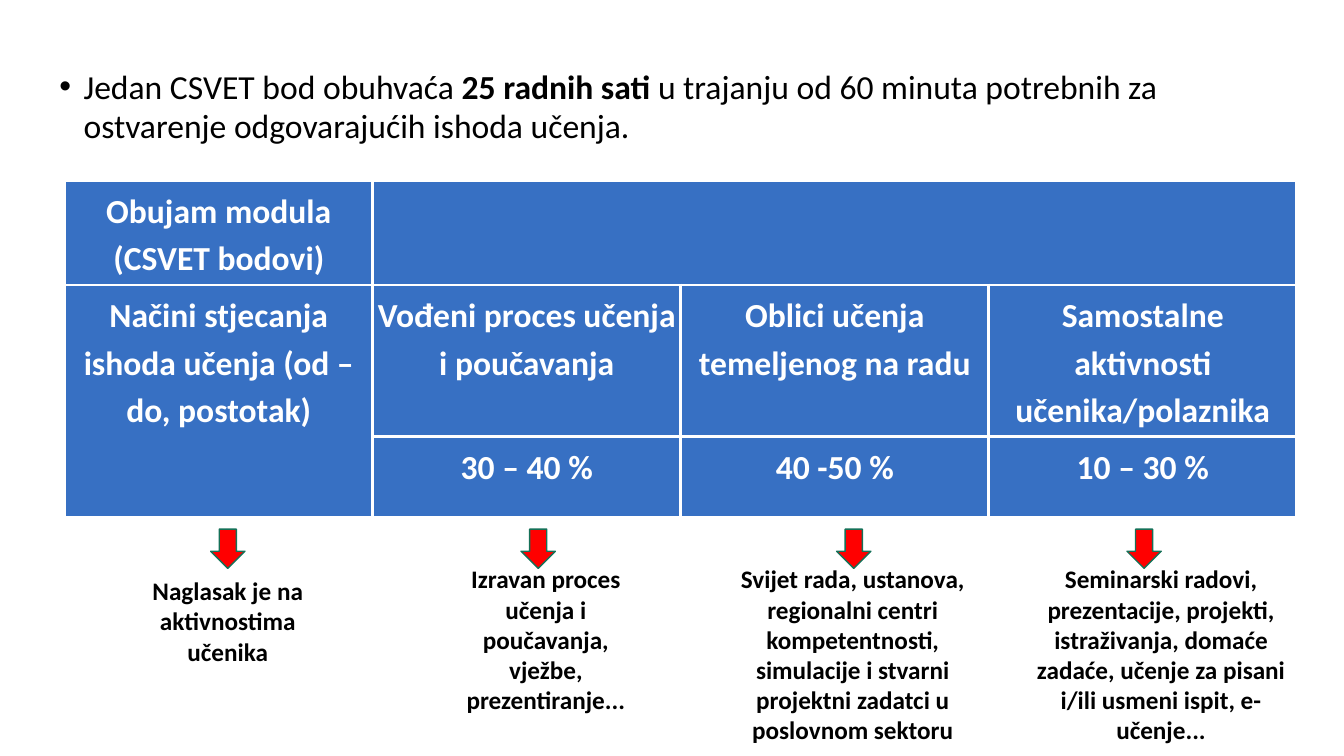
from dataclasses import dataclass

from lxml import etree
from pptx import Presentation
from pptx.dml.color import RGBColor
from pptx.enum import shapes, text
from pptx.oxml import ns
from pptx.util import Pt


@dataclass(frozen=True)
class Theme:
    font: str = "Calibri"
    body: int = 24
    note: int = 18
    ink: str = "000000"
    paper: str = "FFFFFF"
    table: str = "3770C3"
    arrow: str = "FF0000"
    arrow_edge: str = "157158"


THEME = Theme()

# (row, column, text, side inset)
TABLE_CELLS = [
    (0, 0, "Obujam modula (CSVET bodovi)", 2.7),
    (1, 0, "Načini stjecanja ishoda učenja (od –do, postotak)", 2.7),
    (1, 1, "Vođeni proces učenja i poučavanja", 2.7),
    (1, 2, "Oblici učenja temeljenog na radu", 5),
    (1, 3, "Samostalne aktivnosti učenika/polaznika", 5),
    (2, 1, "30 – 40 %", 2.7),
    (2, 2, "40 -50 %", 5),
    (2, 3, "10 – 30 %", 5),
]

# (box, arrow left edge, text)
NOTES = [
    ((91.4, 407.5, 142.6, 72), 150.5, "Naglasak je na aktivnostima učenika"),
    ((312.5, 399, 154.8, 115), 372.2,
     "Izravan proces učenja i poučavanja, vježbe, prezentiranje..."),
    ((503.3, 399, 211.7, 137), 597.6,
     "Svijet rada, ustanova, regionalni centri kompetentnosti, "
     "simulacije i stvarni projektni zadatci u poslovnom sektoru"),
    ((728.6, 399, 201.6, 137), 805,
     "Seminarski radovi, prezentacije, projekti, istraživanja, domaće "
     "zadaće, učenje za pisani i/ili usmeni ispit, e-učenje..."),
]


def rgb(value):
    return RGBColor.from_string(value)


def set_all(obj, **values):
    for name, value in values.items():
        setattr(obj, name, value)


def add_run(p, words, size, color, bold):
    r = p.add_run()
    r.text = words
    set_all(r.font, name=THEME.font, size=Pt(size), bold=bold)
    r.font.color.rgb = rgb(color)


def add_textbox(s, box):
    sp = s.shapes.add_textbox(*map(Pt, box))
    sp.text_frame.word_wrap = True
    return sp.text_frame


def add_intro(s, box):
    p = add_textbox(s, box).paragraphs[0]
    set_all(p, line_spacing=Pt(28), space_before=Pt(10))
    pPr = p._p.get_or_add_pPr()
    pPr.set("marL", str(Pt(18)))
    pPr.set("indent", str(Pt(-17.3)))
    etree.SubElement(pPr, ns.qn("a:buFont"), typeface="Arial")
    etree.SubElement(pPr, ns.qn("a:buChar"), char="•")
    for words, bold in (
        ("Jedan CSVET bod obuhvaća ", False),
        ("25 radnih sati ", True),
        ("u trajanju od 60 minuta potrebnih za ostvarenje "
         "odgovarajućih ishoda učenja.", False),
    ):
        add_run(p, words, THEME.body, THEME.ink, bold)


def style_cell(cell):
    cell.fill.solid()
    cell.fill.fore_color.rgb = rgb(THEME.table)
    tcPr = cell._tc.get_or_add_tcPr()
    for i, side in enumerate(("lnL", "lnR", "lnT", "lnB")):
        ln = etree.Element(ns.qn(f"a:{side}"), w=str(Pt(2.21)))
        fill = etree.SubElement(ln, ns.qn("a:solidFill"))
        etree.SubElement(fill, ns.qn("a:srgbClr"), val=THEME.paper)
        tcPr.insert(i, ln)


def add_module_table(s, box, row_heights):
    columns = 4
    table = s.shapes.add_table(len(row_heights), columns, *map(Pt, box)).table
    for column in table.columns:
        column.width = Pt(box[2] / columns)
    for row, height in zip(table.rows, row_heights):
        row.height = Pt(height)
    for cell in table.iter_cells():
        style_cell(cell)
    table.cell(0, 1).merge(table.cell(0, 3))
    table.cell(1, 0).merge(table.cell(2, 0))
    for row, column, words, inset in TABLE_CELLS:
        cell = table.cell(row, column)
        set_all(cell, margin_left=Pt(inset), margin_right=Pt(inset))
        p = cell.text_frame.paragraphs[0]
        set_all(p, alignment=text.PP_ALIGN.CENTER, line_spacing=1.15,
                space_after=Pt(8))
        add_run(p, words, THEME.body, THEME.paper, True)


def add_note(s, box, words):
    tf = add_textbox(s, box)
    tf.auto_size = text.MSO_AUTO_SIZE.SHAPE_TO_FIT_TEXT
    p = tf.paragraphs[0]
    p.alignment = text.PP_ALIGN.CENTER
    add_run(p, words, THEME.note, THEME.ink, True)


def add_arrow(s, box):
    sp = s.shapes.add_shape(shapes.MSO_SHAPE.DOWN_ARROW, *map(Pt, box))
    sp.shadow.inherit = False
    sp.fill.solid()
    sp.fill.fore_color.rgb = rgb(THEME.arrow)
    sp.line.color.rgb = rgb(THEME.arrow_edge)
    sp.line.width = Pt(1)


def build_slide(prs):
    s = prs.slides.add_slide(prs.slide_layouts[6])
    add_module_table(s, (46.3, 129, 880, 216), (63.4, 95, 57.6))
    add_intro(s, (34.6, 44, 866, 91.4))
    for box, arrow_left, words in NOTES:
        add_note(s, box, words)
        add_arrow(s, (arrow_left, 378, 24.5, 28))


def main():
    prs = Presentation()
    set_all(prs, slide_width=Pt(960), slide_height=Pt(540))
    build_slide(prs)
    prs.save("out.pptx")


if __name__ == "__main__":
    main()
